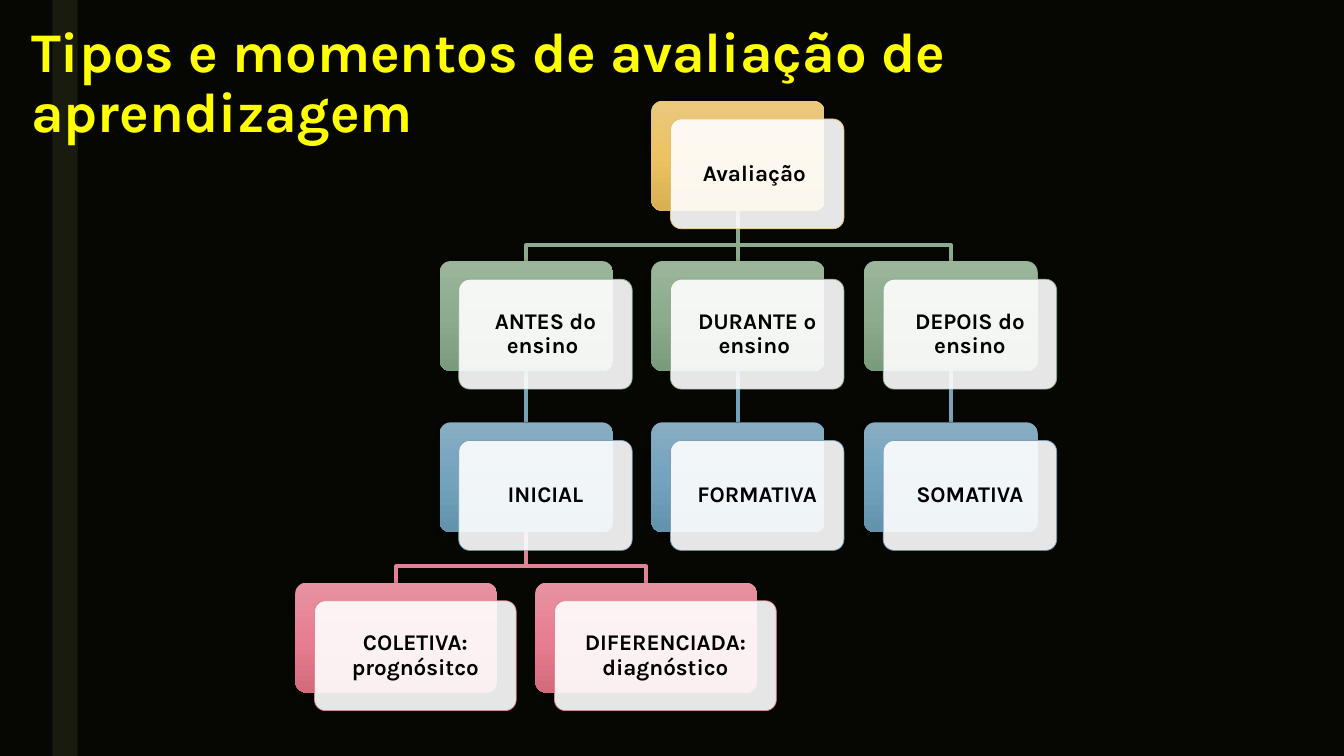
from pptx import Presentation
from pptx.dml.color import RGBColor
from pptx.enum.shapes import MSO_CONNECTOR, MSO_SHAPE
from pptx.enum.text import MSO_ANCHOR, PP_ALIGN
from pptx.oxml import parse_xml
from pptx.oxml.ns import nsdecls
from pptx.util import Inches, Pt
from lxml import etree

RECTANGLE = MSO_SHAPE.RECTANGLE
ROUNDED = MSO_SHAPE.ROUNDED_RECTANGLE
STRAIGHT = MSO_CONNECTOR.STRAIGHT
CENTER = PP_ALIGN.CENTER
MIDDLE = MSO_ANCHOR.MIDDLE
TOP = MSO_ANCHOR.TOP

FONT = "Karla"
BOTTOM_SIDE, TOP_SIDE = 2, 0
CARD_WIDTH, CARD_HEIGHT = 1.72, 1.09
OFFSET_X, OFFSET_Y = 0.19, 0.18
BEND = 0.34
COLUMNS = (4.36, 6.46, 8.57)
ROWS = (1, 2.59, 4.19, 5.78)
LEVEL_GRADIENTS = (
    ("EAC87E", "ECC263", "D9B051"),
    ("9BB59B", "8CAC8D", "7A9B7B"),
    ("88ADC3", "74A3BE", "6392AD"),
    ("E793A2", "E77E91", "D36B7D"),
)
LEVEL_LINES = ("E6C069", "8DAB8E", "77A2BB", "E28394")
NODES = (
    ("Avaliação ", None, 0, COLUMNS[1], CARD_WIDTH),
    ("ANTES do ensino ", "Avaliação ", 1, COLUMNS[0], CARD_WIDTH),
    ("DURANTE o ensino ", "Avaliação ", 1, COLUMNS[1], CARD_WIDTH),
    ("DEPOIS do ensino", "Avaliação ", 1, COLUMNS[2], CARD_WIDTH),
    ("INICIAL", "ANTES do ensino ", 2, COLUMNS[0], CARD_WIDTH),
    ("FORMATIVA", "DURANTE o ensino ", 2, COLUMNS[1], CARD_WIDTH),
    ("SOMATIVA", "DEPOIS do ensino", 2, COLUMNS[2], CARD_WIDTH),
    ("COLETIVA: prognósitco", "INICIAL", 3, 2.93, 2),
    ("DIFERENCIADA: diagnóstico", "INICIAL", 3, 5.31, 2.2),
)


def color(hex_value):
    return RGBColor.from_string(hex_value)


def add_box(slide, kind, left, top, width, height, fill):
    shape = slide.shapes.add_shape(
        kind, Inches(left), Inches(top), Inches(width), Inches(height))
    shape.shadow.inherit = False
    shape.fill.solid()
    shape.fill.fore_color.rgb = color(fill)
    shape.line.fill.background()
    return shape


def add_text(shape, text, size, font_color, anchor, alignment, spacing):
    frame = shape.text_frame
    frame.word_wrap = True
    frame.vertical_anchor = anchor
    paragraph = frame.paragraphs[0]
    paragraph.alignment = alignment
    paragraph.line_spacing = spacing
    run = paragraph.add_run()
    run.text = text
    run.font.name = FONT
    run.font.size = Pt(size)
    run.font.bold = True
    run.font.color.rgb = color(font_color)


def add_title(slide, text):
    box = slide.shapes.add_textbox(
        Inches(0.21), Inches(0.2), Inches(12.76), Inches(0.8))
    add_text(box, text, 40, "FFFF00", TOP, PP_ALIGN.LEFT, 0.89)


def set_gradient(shape, colors):
    stops = "".join(
        f'<a:gs pos="{index * 50000}"><a:srgbClr val="{value}"/></a:gs>'
        for index, value in enumerate(colors))
    gradient = parse_xml(
        f'<a:gradFill {nsdecls("a")} rotWithShape="1"><a:gsLst>{stops}</a:gsLst>'
        '<a:lin ang="5400000" scaled="0"/></a:gradFill>')
    solid = shape.fill._xPr.find("{*}solidFill")
    solid.getparent().replace(solid, gradient)


def set_shadow(shape):
    effects = shape._element.spPr.find("{*}effectLst")
    effects.append(parse_xml(
        f'<a:outerShdw {nsdecls("a")} blurRad="{Pt(4.5)}" dist="{Pt(1.5)}" '
        'dir="5400000" rotWithShape="0"><a:srgbClr val="000000">'
        '<a:alpha val="35000"/></a:srgbClr></a:outerShdw>'))


def set_opacity(shape, percent):
    fill_color = shape._element.spPr.find("{*}solidFill")[0]
    fill_color.append(parse_xml(
        f'<a:alpha {nsdecls("a")} val="{percent * 1000}"/>'))


def add_node(slide, text, level, left, width):
    top = ROWS[level]
    back = add_box(slide, ROUNDED, left, top, width, CARD_HEIGHT, "FFFFFF")
    front = add_box(slide, ROUNDED, left + OFFSET_X, top + OFFSET_Y,
                    width, CARD_HEIGHT, "FFFFFF")
    for card in (back, front):
        card.adjustments[0] = 0.1
    set_gradient(back, LEVEL_GRADIENTS[level])
    set_shadow(back)
    set_opacity(front, 90)
    front.line.color.rgb = color(LEVEL_LINES[level])
    front.line.width = Pt(0.5)
    frame = front.text_frame
    frame.margin_left = frame.margin_right = Inches(0.07)
    frame.margin_top = frame.margin_bottom = Inches(0.07)
    add_text(front, text, 16, "000000", MIDDLE, CENTER, 0.9)
    return back


def add_straight_link(slide, parent, child):
    link = slide.shapes.add_connector(STRAIGHT, 0, 0, 0, 0)
    link.begin_connect(parent, BOTTOM_SIDE)
    link.end_connect(child, TOP_SIDE)
    effects = parse_xml(f'<a:effectLst {nsdecls("a")}/>')
    return link, effects


def add_elbow_link(slide, parent, child):
    start_x = parent.left + parent.width // 2
    start_y = parent.top + parent.height
    end_x = child.left + child.width // 2
    bend_y = start_y + Inches(BEND)
    builder = slide.shapes.build_freeform(start_x, start_y)
    builder.add_line_segments(
        [(start_x, bend_y), (end_x, bend_y), (end_x, child.top)], close=False)
    link = builder.convert_to_shape()
    link.fill.background()
    link.shadow.inherit = False
    return link


def add_link(slide, parent, child, line_color, first_card):
    effects = None
    if parent.left == child.left:
        link, effects = add_straight_link(slide, parent, child)
    else:
        link = add_elbow_link(slide, parent, child)
    link.line.color.rgb = color(line_color)
    link.line.width = Pt(2.75)
    if effects is not None:
        link._element.spPr.append(effects)
    first_card._element.addprevious(link._element)


def add_tree(slide):
    cards = {}
    for text, _, level, left, width in NODES:
        cards[text] = add_node(slide, text, level, left, width)
    first_card = cards[NODES[0][0]]
    for text, parent, level, _, _ in NODES[1:]:
        add_link(slide, cards[parent], cards[text], LEVEL_LINES[level], first_card)


def main():
    presentation = Presentation()
    presentation.slide_width = Inches(13.33)
    presentation.slide_height = Inches(7.5)
    slide = presentation.slides.add_slide(presentation.slide_layouts[6])
    slide.background.fill.solid()
    slide.background.fill.fore_color.rgb = color("060703")
    add_box(slide, RECTANGLE, 0.52, 0, 0.25, 7.5, "191B0E")
    add_title(slide, "Tipos e momentos de avaliação de aprendizagem")
    add_tree(slide)
    presentation.save("out.pptx")


if __name__ == "__main__":
    main()
